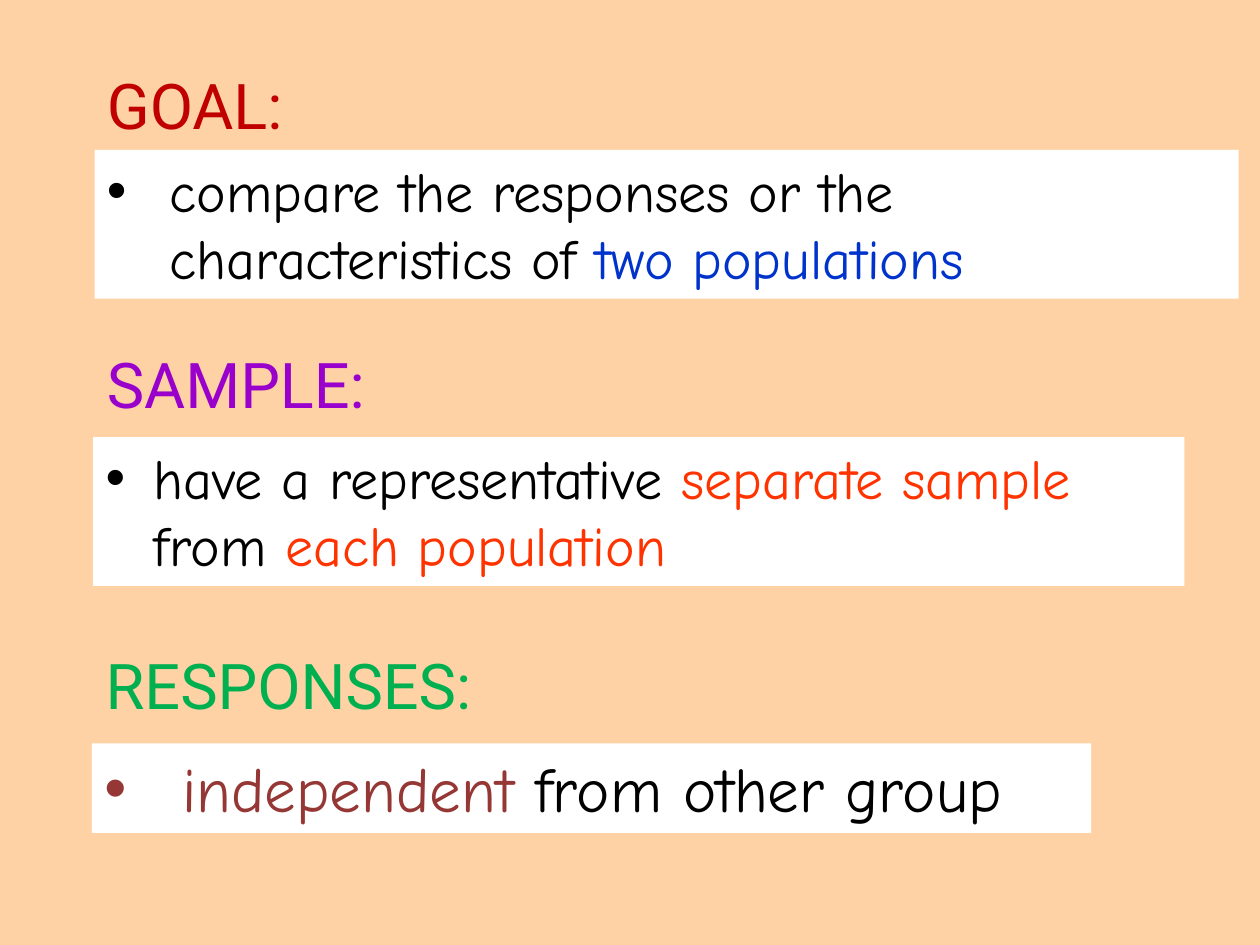
from lxml import etree
from pptx import Presentation
from pptx.dml.color import RGBColor
from pptx.enum.shapes import MSO_SHAPE
from pptx.enum.text import MSO_ANCHOR, MSO_AUTO_SIZE, PP_ALIGN
from pptx.oxml.ns import qn
from pptx.util import Inches, Pt

RECT = MSO_SHAPE.RECTANGLE
TOP = MSO_ANCHOR.TOP
LEFT = PP_ALIGN.LEFT
GROW = MSO_AUTO_SIZE.SHAPE_TO_FIT_TEXT

HUES = {
    "back": "FFD2A5", "white": "FFFFFF", "black": "000000",
    "red": "C00000", "blue": "0033CC", "purple": "9900CC",
    "orange": "FF3300", "green": "00B050", "brown": "953735",
}


def add_run(para, text, font, size, hue):
    run = para.add_run()
    run.text = text
    run.font.name = font
    run.font.size = Pt(size)
    run.font.color.rgb = RGBColor.from_string(HUES[hue])


deck = Presentation()
deck.slide_width = Inches(10)
deck.slide_height = Inches(7.5)
slide = deck.slides.add_slide(deck.slide_layouts[6])
back = slide.background.fill
back.solid()
back.fore_color.rgb = RGBColor.from_string(HUES["back"])

parts = [
    ("GOAL:", "red", (0.75, 0.48, 1.7, 0.71),
     (0.75, 1.19, 9.08, 1.18), 0.5, 32,
     [("compare the responses or the characteristics of ", "black"),
      ("two populations", "blue")]),
    ("SAMPLE:", "purple", (0.75, 2.69, 2.44, 0.71),
     (0.74, 3.47, 8.66, 1.18), 0.38, 32,
     [("have a representative ", "black"), ("separate sample ", "orange"),
      ("from ", "black"), ("each population", "orange")]),
    ("RESPONSES:", "green", (0.74, 5.08, 3.31, 0.71),
     (0.73, 5.9, 7.93, 0.71), 0.62, 36,
     [("independent", "brown"), (" from other group", "black")]),
]

for head, hue, spot, area, indent, size, runs in parts:
    label = slide.shapes.add_textbox(*map(Inches, spot))
    label.text_frame.word_wrap = False
    label.text_frame.auto_size = GROW
    add_run(label.text_frame.paragraphs[0], head, "Roboto", 36, hue)

    panel = slide.shapes.add_shape(RECT, *map(Inches, area))
    panel.shadow.inherit = False
    panel.fill.solid()
    panel.fill.fore_color.rgb = RGBColor.from_string(HUES["white"])
    panel.line.fill.background()
    frame = panel.text_frame
    frame.word_wrap = True
    frame.auto_size = GROW
    frame.vertical_anchor = TOP
    para = frame.paragraphs[0]
    para.alignment = LEFT
    props = para._p.get_or_add_pPr()
    props.set("marL", str(Inches(indent)))
    props.set("indent", str(-Inches(indent)))
    etree.SubElement(props, qn("a:buFont"), typeface="Arial")
    etree.SubElement(props, qn("a:buChar"), char="•")
    for text, tint in runs:
        add_run(para, text, "Comic Neue", size, tint)

deck.save("out.pptx")
